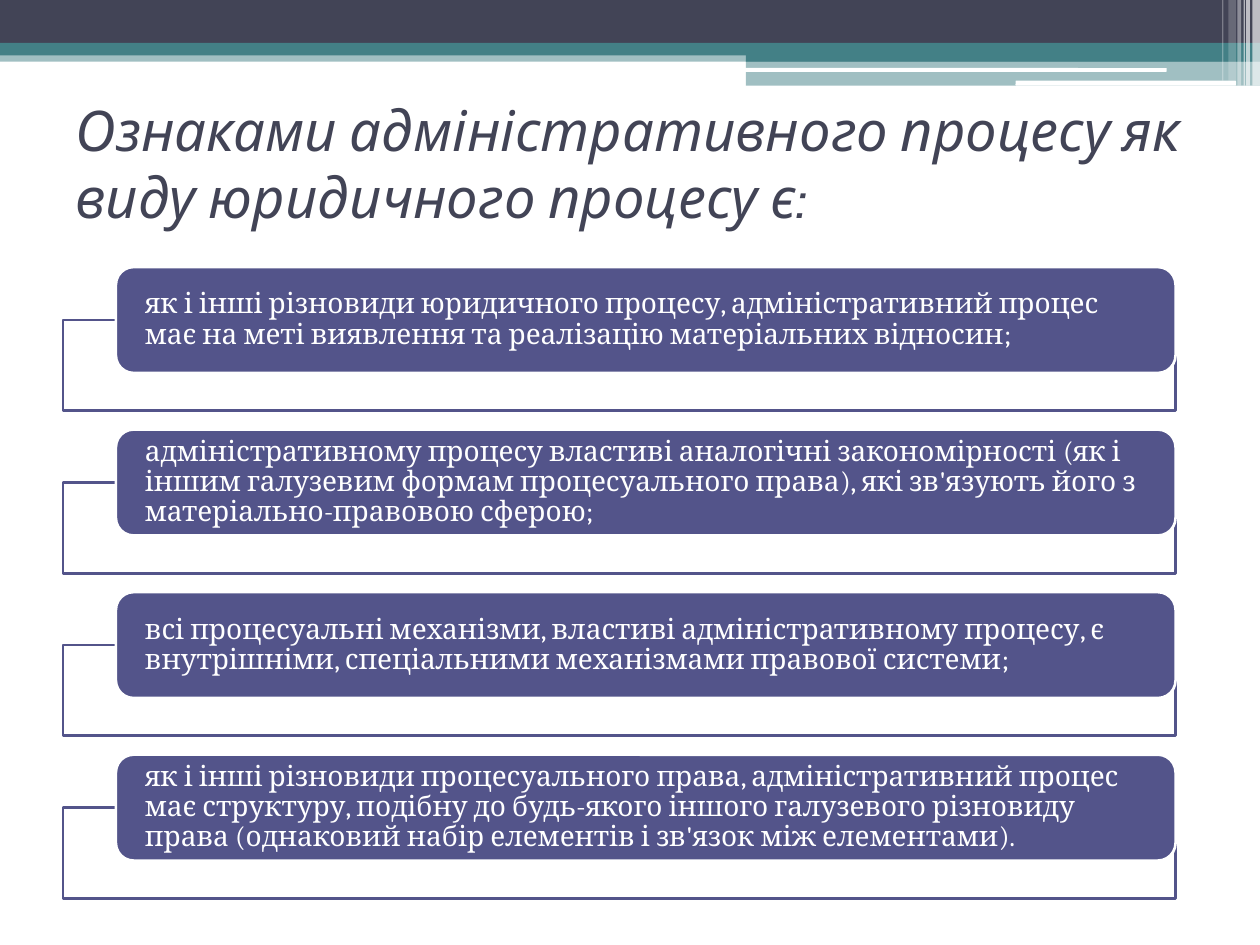
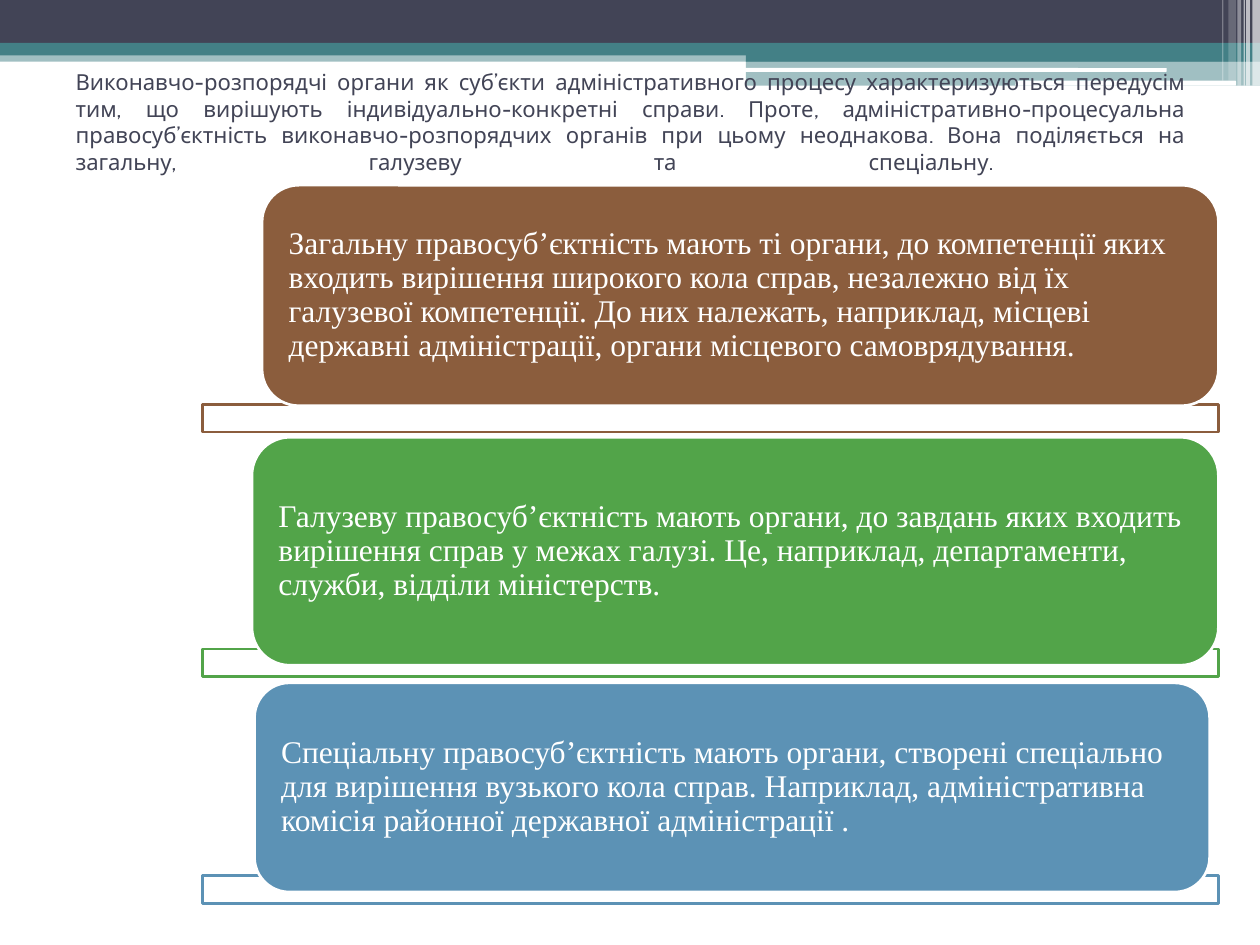
from copy import deepcopy
from dataclasses import dataclass

from lxml.etree import SubElement
from pptx import Presentation
from pptx.dml.color import RGBColor
from pptx.enum.shapes import MSO_SHAPE
from pptx.enum.text import MSO_ANCHOR, MSO_AUTO_SIZE, PP_ALIGN
from pptx.oxml.ns import qn
from pptx.util import Inches, Pt


@dataclass(frozen=True)
class Theme:
    dark: str = "424456"
    teal: str = "438086"
    white: str = "FFFFFF"
    violet: str = "53548A"
    brown: str = "8B5D3D"
    green: str = "52A449"
    blue: str = "5C92B5"
    title_font: str = "Cabin"
    feature_font: str = "Cambria"
    body_font: str = "Times New Roman"
    title_size: float = 32
    intro_size: float = 12.6
    feature_size: float = 16
    body_size: float = 18
    outline: float = 1.5


THEME = Theme()
COLUMNS, ROWS = 100, 75
CELL = Inches(0.1)
CORNER = 1 / 6  # corner radius of a rounded box, as a share of its height
CORNER_INSET = 0.29 * CORNER  # text inset caused by the rounded corners


def add_panel(page, left, top, width, height, fill, opacity=100, line=None, rounded=False):
    """Add a flat rectangle; lengths are in grid cells, opacity in percent."""
    kind = MSO_SHAPE.ROUNDED_RECTANGLE if rounded else MSO_SHAPE.RECTANGLE
    panel = page.shapes.add_shape(kind, *(round(n * CELL) for n in (left, top, width, height)))
    panel.shadow.inherit = False
    panel.fill.solid()
    panel.fill.fore_color.rgb = RGBColor.from_string(fill)
    if opacity < 100:
        color = panel.element.spPr.find(qn("a:solidFill"))[0]
        SubElement(color, qn("a:alpha")).set("val", str(opacity * 1000))
    if line:
        panel.line.color.rgb = RGBColor.from_string(line)
        panel.line.width = Pt(THEME.outline)
    else:
        panel.line.fill.background()
    if rounded:
        panel.adjustments[0] = CORNER
    return panel


def write(box, text, font, size, color, italic=None, align=PP_ALIGN.LEFT,
          spacing=1.0, inset=1.0, inset_top=0.5):
    """Fill a shape with one paragraph; a line feed in the text is a line break."""
    frame = box.text_frame
    frame.word_wrap = True
    frame.auto_size = MSO_AUTO_SIZE.NONE
    frame.vertical_anchor = MSO_ANCHOR.MIDDLE
    frame.margin_left = frame.margin_right = round(inset * CELL)
    frame.margin_top = frame.margin_bottom = round(inset_top * CELL)
    para = frame.paragraphs[0]
    para.alignment = align
    para.line_spacing = spacing
    words, *breaks = text.split("\n")
    span = para.add_run()
    span.text = words
    span.font.name = font
    span.font.size = Pt(size)
    span.font.italic = italic
    span.font.color.rgb = RGBColor.from_string(color)
    for _ in breaks:
        para.add_line_break()
    # Breaks and the empty line after them keep the size of the text
    for line_break in box.element.iter(qn("a:br")):
        line_break.append(deepcopy(span.font._element))
    if breaks:
        SubElement(para._p, qn("a:endParaRPr")).set("sz", str(round(size * 100)))


deck = Presentation()
deck.slide_width = COLUMNS * CELL
deck.slide_height = ROWS * CELL
layout = deck.slide_layouts[5]
for holder in list(layout.placeholders)[1:]:
    holder.element.getparent().remove(holder.element)
features_page = deck.slides.add_slide(layout)
organs_page = deck.slides.add_slide(layout)

# Header bands: left, top, width, height, fill, opacity, line, rounded
HEADER = [
    (0, 4, COLUMNS, 0.9, THEME.teal, 50),
    (0, 0, COLUMNS, 3.4, THEME.dark),
    (0, 3.4, COLUMNS, 1, THEME.teal),
    (59.2, 3.9, 40.8, 1, THEME.teal),
    (59.2, 4.8, 40.8, 2, THEME.teal, 50),
    (59.1, 5.4, 33.5, 0.3, THEME.white, 100, None, True),
    (80.6, 6.4, 17.5, 0.4, THEME.white, 100, None, True),
]
# Light stripes at the right edge: left, width, height, opacity
STRIPES = [(99.4, 0.6, 6.8, 65), (98.9, 0.3, 6.8, 65), (98.7, 0.1, 6.8, 60),
           (98.2, 0.3, 6.8, 40), (97.5, 0.6, 6.4, 20), (97, 0.1, 6.4, 30)]
header = [add_panel(features_page, *band) for band in HEADER]
header += [add_panel(features_page, left, 0, width, height, THEME.white, opacity)
           for left, width, height, opacity in STRIPES]
# The header belongs to the layout, so both slides share it
for position, band in enumerate(header, start=2):
    layout.shapes.element.insert(position, band.element)

# Titles: page, top, height, text, format
TITLES = [
    (features_page, 7.5, 10.8,
     "Ознаками адміністративного процесу як виду юридичного процесу є:",
     dict(size=THEME.title_size, italic=True)),
    (organs_page, 5.2, 11,
     "Виконавчо-розпорядчі органи як суб’єкти адміністративного процесу характеризуються "
     "передусім тим, що вирішують індивідуально-конкретні справи. Проте, "
     "адміністративно-процесуальна правосуб’єктність виконавчо-розпорядчих органів при цьому "
     "неоднакова. Вона поділяється на загальну, галузеву та спеціальну. \n",
     dict(size=THEME.intro_size, align=PP_ALIGN.JUSTIFY)),
]
for page, top, height, text, style in TITLES:
    title = page.shapes.title
    title.left, title.top = 5 * CELL, round(top * CELL)
    title.width, title.height = 90 * CELL, round(height * CELL)
    write(title, text, font=THEME.title_font, color=THEME.dark, **style)

# Features of the process: four equal rows
FEATURES = [
    "як і інші різновиди юридичного процесу, адміністративний процес має на меті виявлення "
    "та реалізацію матеріальних відносин;",
    "адміністративному процесу властиві аналогічні закономірності (як і іншим галузевим "
    "формам процесуального права), які зв'язують його з матеріально-правовою сферою;",
    "всі процесуальні механізми, властиві адміністративному процесу, є внутрішніми, "
    "спеціальними механізмами правової системи;",
    "як і інші різновиди процесуального права, адміністративний процес має структуру, "
    "подібну до будь-якого іншого галузевого різновиду права (однаковий набір елементів "
    "і зв'язок між елементами).",
]
FEATURE_TOP, FEATURE_STEP, FEATURE_HEIGHT = 21.2, 12.9, 8.4
for index, text in enumerate(FEATURES):
    top = FEATURE_TOP + index * FEATURE_STEP
    add_panel(features_page, 5, top + FEATURE_HEIGHT / 2, 88.3, 7.2,
              THEME.white, 90, THEME.violet)
    card = add_panel(features_page, 9.2, top, 84.1, FEATURE_HEIGHT,
                     THEME.violet, line=THEME.white, rounded=True)
    write(card, text, THEME.feature_font, THEME.feature_size, THEME.white, spacing=0.9,
          inset=2.3 - CORNER_INSET * FEATURE_HEIGHT, inset_top=0)

# Kinds of legal capacity: colour, frame top, card left, top, width, height, text
CAPACITIES = [
    (THEME.brown, 32.1, 20.8, 14.7, 75.9, 17.5,
     "Загальну правосуб’єктність мають ті органи, до компетенції яких входить вирішення "
     "широкого кола справ, незалежно від їх галузевої компетенції. До них належать, "
     "наприклад, місцеві державні адміністрації, органи місцевого самоврядування."),
    (THEME.green, 51.5, 20, 34.7, 76.7, 18.1,
     "Галузеву правосуб’єктність мають органи, до завдань яких входить вирішення справ "
     "у межах галузі. Це, наприклад, департаменти, служби, відділи міністерств."),
    (THEME.blue, 69.5, 20.2, 54.2, 75.8, 16.6,
     "Спеціальну правосуб’єктність мають органи, створені спеціально для вирішення "
     "вузького кола справ. Наприклад, адміністративна комісія районної державної "
     "адміністрації ."),
]
for color, frame_top, left, top, width, height, text in CAPACITIES:
    add_panel(organs_page, 16.1, frame_top, 80.6, 2.2, THEME.white, 90, color)
    card = add_panel(organs_page, left, top, width, height, color,
                     line=THEME.white, rounded=True)
    write(card, text, THEME.body_font, THEME.body_size, THEME.white, spacing=0.9,
          inset=2.1 - CORNER_INSET * height, inset_top=0)

deck.save("out.pptx")
